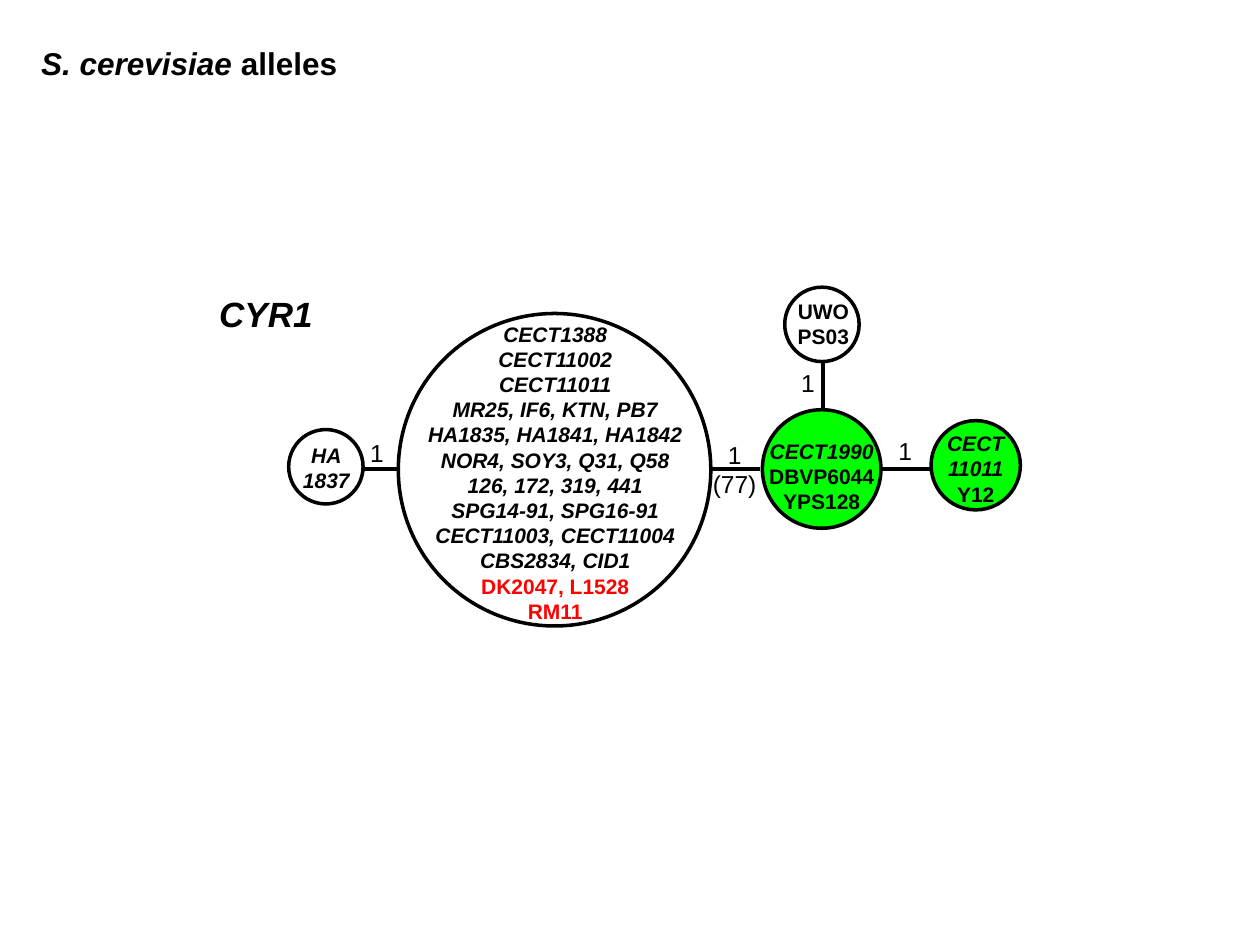
from dataclasses import dataclass
from typing import NamedTuple, Optional

import pptx
import pptx.dml.color
import pptx.enum.shapes
import pptx.enum.text
import pptx.oxml.ns
import pptx.util
from lxml import etree

Cm = pptx.util.Cm
RGBColor = pptx.dml.color.RGBColor
ALIGN = pptx.enum.text.PP_ALIGN

BLACK = RGBColor(0, 0, 0)
WHITE = RGBColor(255, 255, 255)
RED = RGBColor(255, 0, 0)
GREEN = RGBColor(0, 255, 0)

BASE = {"name": "Arial", "color": BLACK, "bold": False, "italic": False}
STRAIN = BASE | {"size": pptx.util.Pt(12), "bold": True}
STRAIN_ITALIC = STRAIN | {"italic": True}
STRAIN_RED = STRAIN | {"color": RED}
DISTANCE = BASE | {"size": pptx.util.Pt(14)}
GENE = STRAIN_ITALIC | {"size": pptx.util.Pt(20)}
TITLE = STRAIN | {"size": pptx.util.Pt(18)}
TITLE_ITALIC = TITLE | {"italic": True}


class Run(NamedTuple):
    text: str
    style: dict


class Box(NamedTuple):
    """Position and size in centimetres."""
    left: float
    top: float
    width: float
    height: float


class Edge(NamedTuple):
    """Line ends in centimetres."""
    start_x: float
    start_y: float
    end_x: float
    end_y: float


@dataclass
class Label:
    box: Box
    lines: list[list[Run]]
    alignment: int = ALIGN.LEFT


@dataclass
class Haplotype:
    left: float
    top: float
    diameter: float
    fill: Optional[RGBColor]
    label: Label


def styled_lines(style: dict, *texts: str) -> list[list[Run]]:
    return [[Run(text, style)] for text in texts]


def strains(box: Box, lines: list[list[Run]]) -> Label:
    return Label(box, lines, ALIGN.CENTER)


AXIS_Y = 9.45
EDGES = [
    Edge(8.05, AXIS_Y, 7.06, AXIS_Y),
    Edge(15.32, AXIS_Y, 14.33, AXIS_Y),
    Edge(18.77, AXIS_Y, 17.78, AXIS_Y),
    Edge(16.59, 7.26, 16.59, 8.26),
]

HAPLOTYPES = [
    Haplotype(8.03, 6.32, 6.3, WHITE, strains(
        Box(8.26, 6.35, 5.87, 6.4),
        styled_lines(
            STRAIN_ITALIC, "CECT1388", "CECT11002", "CECT11011",
            "MR25, IF6, KTN, PB7", "HA1835, HA1841, HA1842",
            "NOR4, SOY3, Q31, Q58", "126, 172, 319, 441",
            "SPG14-91, SPG16-91", "CECT11003, CECT11004", "CBS2834, CID1")
        + styled_lines(STRAIN_RED, "DK2047, L1528", "RM11"))),
    Haplotype(15.37, 8.26, 2.39, GREEN, strains(
        Box(14.99, 8.71, 3.15, 1.8),
        styled_lines(STRAIN_ITALIC, "CECT1990")
        + styled_lines(STRAIN, "DBVP6044", "YPS128"))),
    Haplotype(15.82, 5.79, 1.5, None, strains(
        Box(15.7, 5.89, 1.8, 1.27), styled_lines(STRAIN, "UWOPS03"))),
    Haplotype(5.82, 8.66, 1.5, WHITE, strains(
        Box(5.49, 8.79, 2.18, 1.27),
        styled_lines(STRAIN_ITALIC, "HA", "1837"))),
    Haplotype(18.77, 8.48, 1.8, GREEN, strains(
        Box(18.77, 8.56, 1.8, 1.8),
        styled_lines(STRAIN_ITALIC, "CECT", "11011")
        + styled_lines(STRAIN, "Y12"))),
]

LABELS = [
    Label(Box(7.21, 8.71, 0.76, 0.86), styled_lines(DISTANCE, "1")),
    Label(Box(14.05, 8.74, 1.52, 1.45),
          styled_lines(DISTANCE, "1", "(77)"), ALIGN.CENTER),
    Label(Box(17.86, 8.66, 0.76, 0.86), styled_lines(DISTANCE, "1")),
    Label(Box(15.9, 7.29, 0.81, 0.89), styled_lines(DISTANCE, "1")),
    Label(Box(4.17, 5.77, 2.59, 1.12), styled_lines(GENE, "CYR1")),
    Label(Box(0.58, 0.76, 7.34, 1.02),
          [[Run("S. cerevisiae ", TITLE_ITALIC), Run("alleles", TITLE)]]),
]


def apply_style(font, style: dict) -> None:
    for attribute, value in style.items():
        if attribute == "color":
            font.color.rgb = value
        else:
            setattr(font, attribute, value)


def draw_label(slide, label: Label) -> None:
    text_box = slide.shapes.add_textbox(*map(Cm, label.box))
    frame = text_box.text_frame
    frame.word_wrap = True
    for index, line in enumerate(label.lines):
        paragraph = frame.add_paragraph() if index else frame.paragraphs[0]
        paragraph.alignment = label.alignment
        for item in line:
            run = paragraph.add_run()
            run.text = item.text
            apply_style(run.font, item.style)


def draw_edge(slide, edge: Edge) -> None:
    connector = slide.shapes.add_connector(
        pptx.enum.shapes.MSO_CONNECTOR.STRAIGHT, *map(Cm, edge))
    connector.line.color.rgb = BLACK
    connector.line.width = pptx.util.Pt(2.25)
    etree.SubElement(connector._element.spPr,
                     pptx.oxml.ns.qn("a:effectLst"))


def draw_haplotype(slide, haplotype: Haplotype) -> None:
    box = Box(haplotype.left, haplotype.top,
              haplotype.diameter, haplotype.diameter)
    circle = slide.shapes.add_shape(
        pptx.enum.shapes.MSO_SHAPE.OVAL, *map(Cm, box))
    circle.shadow.inherit = False
    if haplotype.fill is None:
        circle.fill.background()
    else:
        circle.fill.solid()
        circle.fill.fore_color.rgb = haplotype.fill
    circle.line.color.rgb = BLACK
    circle.line.width = pptx.util.Pt(2)
    draw_label(slide, haplotype.label)


def main() -> None:
    presentation = pptx.Presentation()
    presentation.slide_width = Cm(25.4)
    presentation.slide_height = Cm(19.05)
    slide = presentation.slides.add_slide(presentation.slide_layouts[6])
    for edge in EDGES:
        draw_edge(slide, edge)
    for haplotype in HAPLOTYPES:
        draw_haplotype(slide, haplotype)
    for label in LABELS:
        draw_label(slide, label)
    presentation.save("out.pptx")


if __name__ == "__main__":
    main()
